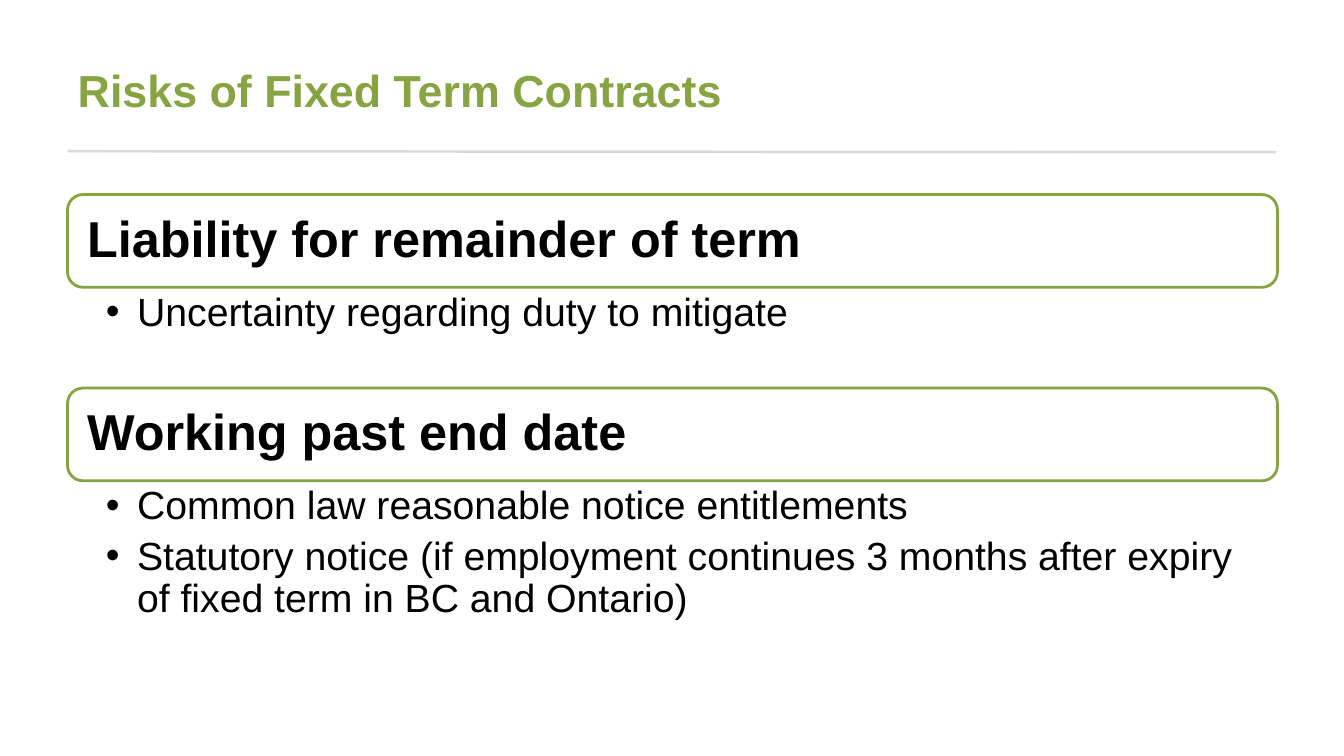
import lxml.etree
import pptx
import pptx.dml.color
import pptx.enum.shapes
import pptx.enum.text
import pptx.oxml.ns
import pptx.util

PX = 9144
GREEN, GREY, BLACK, WHITE = "87A443", "D9D9D9", "000000", "FFFFFF"
LEFT, WIDE = 67, 1200
HEAD = 92
TOPICS = [
    (193, 100, "Liability for remainder of term",
     ["Uncertainty regarding duty to mitigate"]),
    (385, 192, "Working past end date",
     ["Common law reasonable notice entitlements",
      "Statutory notice (if employment continues 3 months after expiry "
      "of fixed term in BC and Ontario)"]),
]


def paint(color, code):
    """Set a colour format from a hex string."""
    color.rgb = pptx.dml.color.RGBColor.from_string(code)


def place(shape, box):
    """Move a shape to a box of left, top, width and height in px."""
    shape.left, shape.top, shape.width, shape.height = (n * PX for n in box)


def write(frame, lines, size, code, bold, pads, anchor):
    """Fill a text frame with left-aligned paragraphs of one style."""
    frame.text = "\n".join(lines)
    frame.word_wrap = True
    frame.auto_size = pptx.enum.text.MSO_AUTO_SIZE.NONE
    frame.vertical_anchor = anchor
    (frame.margin_left, frame.margin_top,
     frame.margin_right, frame.margin_bottom) = (n * PX for n in pads)
    for para in frame.paragraphs:
        para.alignment = pptx.enum.text.PP_ALIGN.LEFT
        para.line_spacing = 0.9
        para.space_before = pptx.util.Pt(0)
        para.font.name = "Arial"
        para.font.size = pptx.util.Pt(size)
        para.font.bold = bold
        paint(para.font.color, code)


def bullet(para):
    """Give a paragraph a round bullet and a hanging indent."""
    para.space_after = pptx.util.Pt(6)
    props = para._p.get_or_add_pPr()
    props.set("marL", str(31 * PX))
    props.set("indent", str(-31 * PX))
    mark = lxml.etree.Element(pptx.oxml.ns.qn("a:buChar"), char="•")
    props.find(pptx.oxml.ns.qn("a:defRPr")).addprevious(mark)


def header(slide, box):
    """Place the title and the rule that crosses it."""
    left, top, wide, high = box
    title = slide.shapes.title
    place(title, box)
    write(title.text_frame, ["Risks of Fixed Term Contracts"], 32, GREEN, True,
          (10, 5, 10, 5), pptx.enum.text.MSO_ANCHOR.MIDDLE)
    ends = (left, top + 120, left + wide - 1, top + 121)
    rule = slide.shapes.add_connector(
        pptx.enum.shapes.MSO_CONNECTOR.STRAIGHT, *(n * PX for n in ends))
    paint(rule.line.color, GREY)
    rule.line.width = pptx.util.Pt(1.75)
    lxml.etree.SubElement(rule._element.spPr, pptx.oxml.ns.qn("a:effectLst"))


def topic(slide, holder, box, name, points):
    """Place a rounded heading with its bulleted list below."""
    left, top, wide, high = box
    card = slide.shapes.add_shape(
        pptx.enum.shapes.MSO_SHAPE.ROUNDED_RECTANGLE, 0, 0, 0, 0)
    place(card, (left, top, wide, HEAD))
    card.shadow.inherit = False
    card.fill.solid()
    paint(card.fill.fore_color, WHITE)
    paint(card.line.color, GREEN)
    card.line.width = pptx.util.Pt(2)
    write(card.text_frame, [name], 36, BLACK, True, (15, 15, 15, 15),
          pptx.enum.text.MSO_ANCHOR.MIDDLE)
    place(holder, (left, top + HEAD, wide, high - HEAD))
    write(holder.text_frame, points, 28, BLACK, False, (38, 5, 28, 5),
          pptx.enum.text.MSO_ANCHOR.TOP)
    for para in holder.text_frame.paragraphs:
        bullet(para)


def main():
    """Build and save the slide."""
    deck = pptx.Presentation()
    deck.slide_width, deck.slide_height = 1333 * PX, 750 * PX
    slide = deck.slides.add_slide(deck.slide_layouts[3])
    header(slide, (LEFT, 30, WIDE, 125))
    for slot, (top, high, name, points) in enumerate(TOPICS, 1):
        topic(slide, slide.placeholders[slot],
              (LEFT, top, WIDE, HEAD + high), name, points)
    deck.save("out.pptx")


if __name__ == "__main__":
    main()
